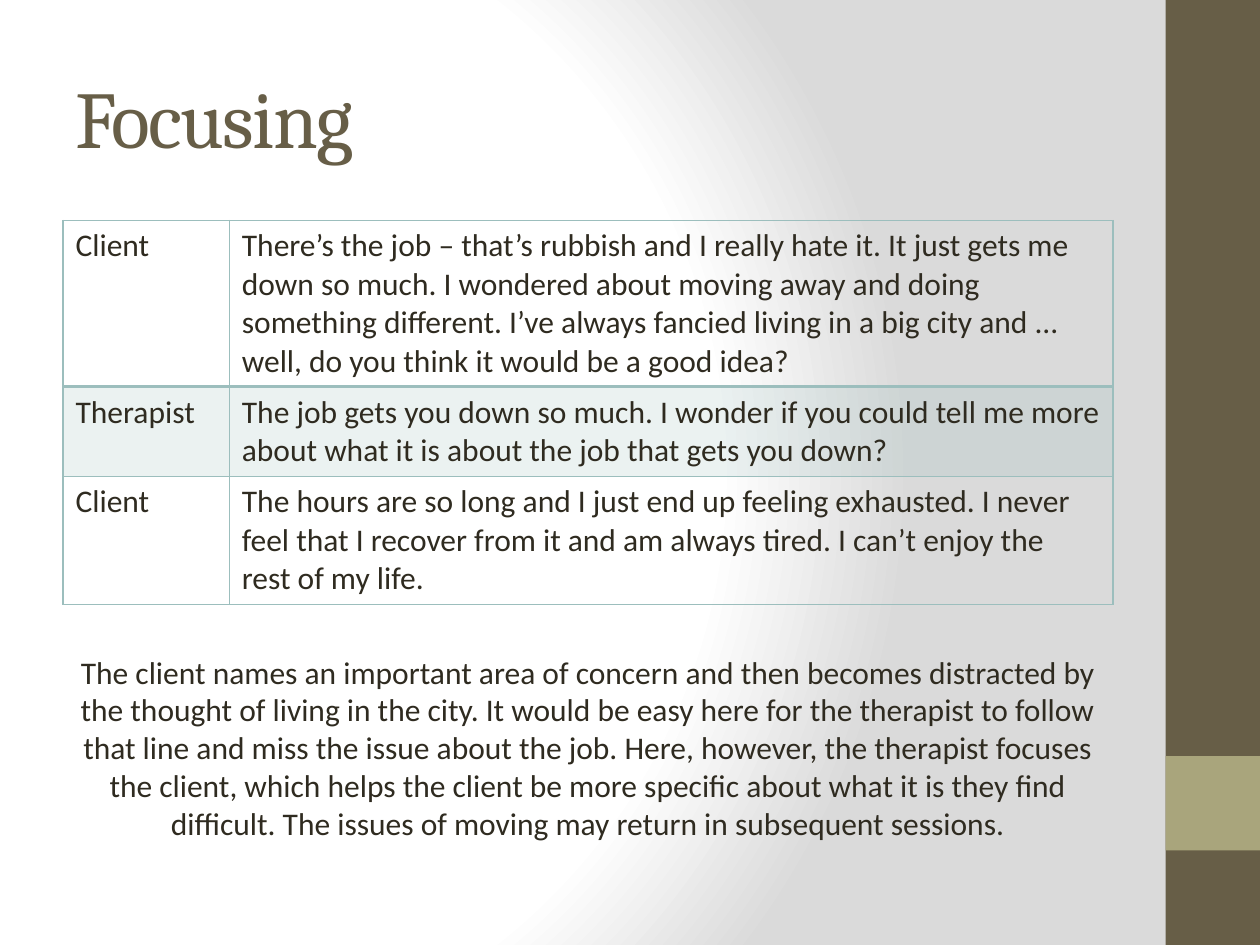
from dataclasses import dataclass

from lxml.etree import SubElement
from pptx import Presentation
from pptx.dml.color import RGBColor
from pptx.enum.shapes import MSO_SHAPE as Shape
from pptx.enum.text import MSO_ANCHOR as Anchor, MSO_AUTO_SIZE as AutoSize, PP_ALIGN as Align
from pptx.oxml import parse_xml
from pptx.oxml.ns import nsdecls, qn
from pptx.util import Inches, Pt


@dataclass(frozen=True)
class Theme:
    brown: str = "675E47"
    olive: str = "A9A57C"
    teal: str = "9CBEBD"
    ink: str = "2F2B20"
    white: str = "FFFFFF"
    grey: str = "DADADA"
    title_font: str = "Cambria"
    body_font: str = "Calibri"
    title_size: float = 46
    body_size: float = 18


THEME = Theme()
WIDTH, HEIGHT = 10, 7.5
MARGIN = WIDTH / 20
CONTENT_WIDTH = WIDTH * 5 / 6
SIDEBAR = HEIGHT / 10
NAME_COLUMN = 1.32
ROW_HEIGHTS = (1.3, 0.7, 1)

DIALOGUE = (
    ("Client", "There’s the job – that’s rubbish and I really hate it. It just gets me down so much. "
               "I wondered about moving away and doing something different. I’ve always fancied living "
               "in a big city and ... well, do you think it would be a good idea?"),
    ("Therapist", "The job gets you down so much. I wonder if you could tell me more about what it is "
                  "about the job that gets you down?"),
    ("Client", "The hours are so long and I just end up feeling exhausted. I never feel that I recover "
               "from it and am always tired. I can’t enjoy the rest of my life."),
)
COMMENTARY = (
    "The client names an important area of concern and then becomes distracted by the thought of living "
    "in the city. It would be easy here for the therapist to follow that line and miss the issue about "
    "the job. Here, however, the therapist focuses the client, which helps the client be more specific "
    "about what it is they find difficult. The issues of moving may return in subsequent sessions."
)


def write_text(frame, text, font=THEME.body_font, size=THEME.body_size, color=THEME.ink,
               align=Align.LEFT, spacing=None):
    frame.word_wrap = True
    paragraph = frame.paragraphs[0]
    paragraph.alignment = align
    run = paragraph.add_run()
    run.text = text
    run.font.name = font
    run.font.size = Pt(size)
    run.font.color.rgb = RGBColor.from_string(color)
    if spacing is not None:
        run.font._element.set("spc", str(round(spacing * 100)))


def set_background(slide):
    stops = ((0, THEME.white), (75, THEME.white), (100, THEME.grey))
    stop_xml = "".join(f'<a:gs pos="{share * 1000}"><a:srgbClr val="{color}"/></a:gs>'
                       for share, color in stops)
    slide.element.cSld.insert(0, parse_xml(
        f'<p:bg {nsdecls("p", "a")}><p:bgPr><a:gradFill rotWithShape="1"><a:gsLst>{stop_xml}</a:gsLst>'
        '<a:path path="circle"><a:fillToRect l="20000" t="50000" r="100000" b="50000"/></a:path>'
        '</a:gradFill><a:effectLst/></p:bgPr></p:bg>'))


def add_band(slide, top, height, color):
    band = slide.shapes.add_shape(Shape.RECTANGLE, Inches(WIDTH - SIDEBAR), Inches(top),
                                  Inches(SIDEBAR), Inches(height))
    band.shadow.inherit = False
    band.fill.solid()
    band.fill.fore_color.rgb = RGBColor.from_string(color)
    band.line.fill.background()


def set_title(slide, text):
    title = slide.shapes.title
    title.left, title.top = Inches(MARGIN), Inches(0.3)
    title.width, title.height = Inches(CONTENT_WIDTH), Inches(1.25)
    frame = title.text_frame
    frame.vertical_anchor = Anchor.MIDDLE
    frame.auto_size = AutoSize.NONE
    write_text(frame, text, font=THEME.title_font, size=THEME.title_size,
               color=THEME.brown, spacing=-1)


def set_borders(cell, top=1, bottom=1):
    properties = cell._tc.get_or_add_tcPr()
    for index, (side, width) in enumerate((("L", 1), ("R", 1), ("T", top), ("B", bottom))):
        properties.insert(index, parse_xml(
            f'<a:ln{side} {nsdecls("a")} w="{Pt(width)}"><a:solidFill>'
            f'<a:srgbClr val="{THEME.teal}"/></a:solidFill></a:ln{side}>'))


def tint_cell(cell, color, opacity):
    cell.fill.solid()
    cell.fill.fore_color.rgb = RGBColor.from_string(color)
    color_element = next(cell._tc.tcPr.iter(qn("a:srgbClr")))
    SubElement(color_element, qn("a:alpha"), val=str(opacity * 1000))


def add_dialogue(slide, rows):
    table = slide.shapes.add_table(len(rows), 2, Inches(MARGIN), Inches(1.75),
                                   Inches(CONTENT_WIDTH), Inches(sum(ROW_HEIGHTS))).table
    table.first_row = table.horz_banding = False
    table.columns[0].width = Inches(NAME_COLUMN)
    table.columns[1].width = Inches(CONTENT_WIDTH - NAME_COLUMN)
    for index, (row, texts) in enumerate(zip(table.rows, rows)):
        row.height = Inches(ROW_HEIGHTS[index])
        for cell, text in zip(row.cells, texts):
            write_text(cell.text_frame, text)
            if index % 2:
                tint_cell(cell, THEME.teal, 20)
            else:
                cell.fill.background()
            set_borders(cell, top=2 if index == 1 else 1, bottom=2 if index == 0 else 1)


def add_commentary(slide, text):
    box = slide.shapes.add_textbox(Inches(MARGIN), Inches(5.13), Inches(CONTENT_WIDTH), Inches(1.62))
    box.text_frame.auto_size = AutoSize.SHAPE_TO_FIT_TEXT
    write_text(box.text_frame, text, align=Align.CENTER)


def main():
    presentation = Presentation()
    presentation.slide_width, presentation.slide_height = Inches(WIDTH), Inches(HEIGHT)
    slide = presentation.slides.add_slide(presentation.slide_layouts[5])
    set_background(slide)
    add_band(slide, 0, HEIGHT, THEME.brown)
    add_band(slide, HEIGHT * 0.8, SIDEBAR, THEME.olive)
    set_title(slide, "Focusing")
    add_dialogue(slide, DIALOGUE)
    add_commentary(slide, COMMENTARY)
    presentation.save("out.pptx")


if __name__ == "__main__":
    main()
